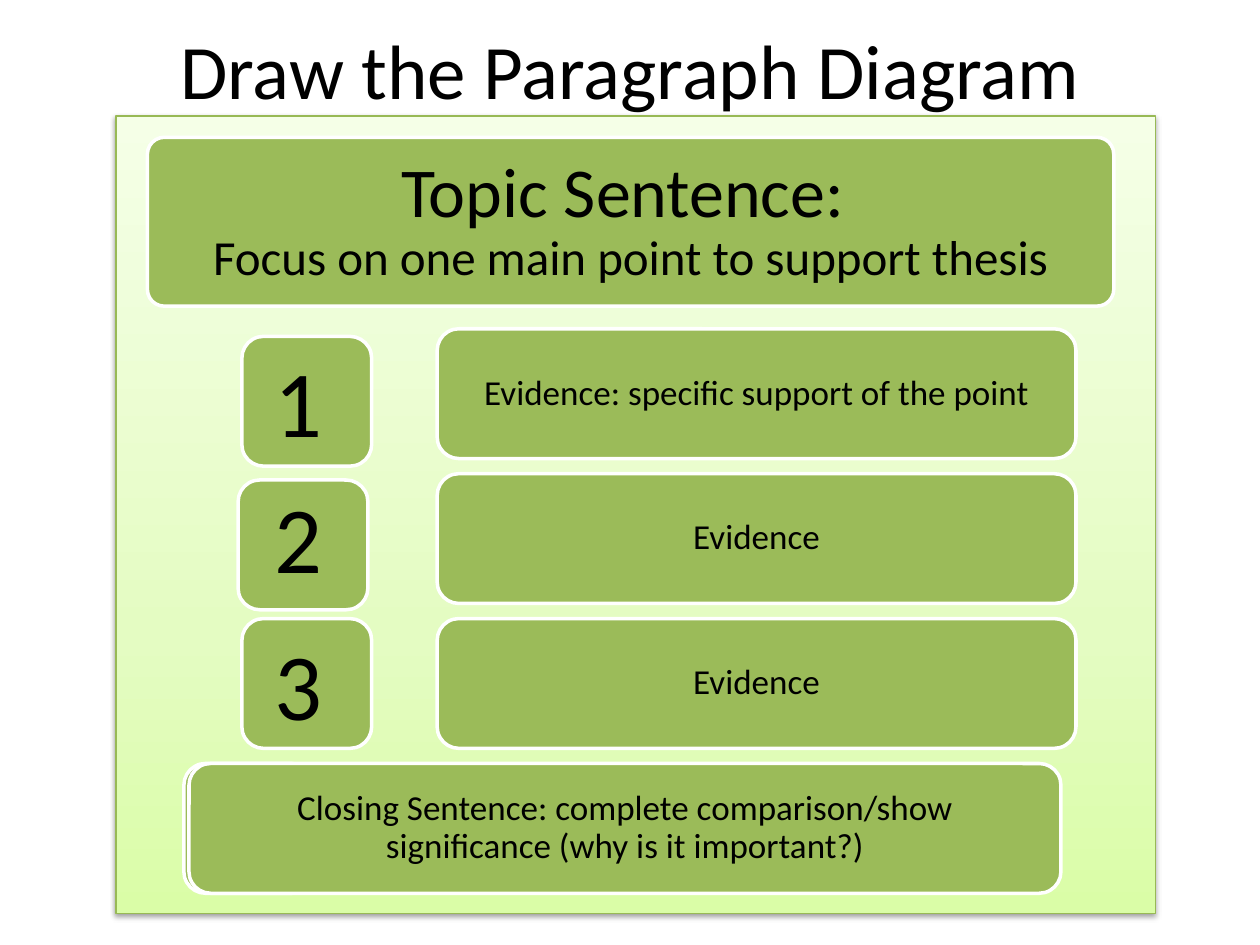
import copy

import pptx
import pptx.dml.color
import pptx.enum.shapes
import pptx.enum.text
import pptx.oxml
import pptx.oxml.ns
import pptx.util

Inches, Pt = pptx.util.Inches, pptx.util.Pt
RGB = pptx.dml.color.RGBColor.from_string
SHAPE = pptx.enum.shapes.MSO_SHAPE
ALIGN = pptx.enum.text.PP_ALIGN
ANCHOR = pptx.enum.text.MSO_ANCHOR

THEME = {
    "font": "Calibri", "text": "000000",
    "box": "9BBB59", "box_line": "FFFFFF", "panel_line": "98B955",
    "panel_stops": [(0, "DAFDA7"), (0.35, "E4FCC2"), (1, "F5FFE7")],
    "title": 44, "topic": 40, "focus": 28, "body": 20, "number": 54,
}

TITLE = "Draw the Paragraph Diagram"
# The trailing space shifts the centred heading slightly to the left.
TOPIC = [("Topic Sentence: ", THEME["topic"]),
         ("Focus on one main point to support thesis", THEME["focus"])]
# Evidence text, number, number tile (left, top), top of the number text
EVIDENCE = [
    ("Evidence: specific support of the point", "1", (1.92, 2.67), 2.67),
    ("Evidence", "2", (1.89, 3.81), 3.75),
    ("Evidence", "3", (1.92, 4.91), 4.92),
]
CLOSING = "Closing Sentence: complete comparison/show significance (why is it important?)"

ROW_TOP, ROW_PITCH, ROW_HEIGHT = 2.61, 1.15, 1.03


def write(shape, lines, align=ALIGN.CENTER, anchor=ANCHOR.MIDDLE,
          insets=(0.1, 0.05), spacing=None):
    """Fill a shape with (text, size) lines; insets are (horizontal, vertical)."""
    frame = shape.text_frame
    frame.word_wrap = True
    frame.vertical_anchor = anchor
    frame.margin_left = frame.margin_right = Inches(insets[0])
    frame.margin_top = frame.margin_bottom = Inches(insets[1])
    frame.text = "\n".join(text for text, size in lines)
    for para, (text, size) in zip(frame.paragraphs, lines):
        para.alignment = align
        para.line_spacing = spacing
        font = para.runs[0].font
        font.name, font.size = THEME["font"], Pt(size)
        font.color.rgb = RGB(THEME["text"])


def add_text(slide, place, lines, **style):
    write(slide.shapes.add_textbox(*map(Inches, place)), lines, **style)


def add_box(slide, place, lines=(), corner=0.167, insets=(0.16, 0.16)):
    box = slide.shapes.add_shape(SHAPE.ROUNDED_RECTANGLE, *map(Inches, place))
    box.adjustments[0] = corner
    box.shadow.inherit = False
    box.fill.solid()
    box.fill.fore_color.rgb = RGB(THEME["box"])
    box.line.color.rgb = RGB(THEME["box_line"])
    box.line.width = Pt(2)
    if lines:
        write(box, lines, insets=insets, spacing=0.9)


def add_panel(slide, place):
    panel = slide.shapes.add_shape(SHAPE.RECTANGLE, *map(Inches, place))
    panel.fill.gradient()
    panel.fill.gradient_angle = 90
    first = panel.fill.gradient_stops[0]
    stop_list = panel.element.spPr.find(".//" + pptx.oxml.ns.qn("a:gsLst"))
    stop_list.insert(1, copy.deepcopy(stop_list[0]))
    for stop, (position, color) in zip(panel.fill.gradient_stops, THEME["panel_stops"]):
        stop.position = position
        stop.color.rgb = RGB(color)
    panel.line.color.rgb = RGB(THEME["panel_line"])
    panel.line.width = Pt(0.75)
    panel.shadow.inherit = False
    effects = panel.element.spPr.find(pptx.oxml.ns.qn("a:effectLst"))
    effects.append(pptx.oxml.parse_xml(
        f'<a:outerShdw {pptx.oxml.ns.nsdecls("a")} blurRad="{Pt(3.1)}" '
        f'dist="{Pt(1.6)}" dir="5400000" rotWithShape="0">'
        '<a:srgbClr val="000000"><a:alpha val="38000"/></a:srgbClr></a:outerShdw>'))


def main():
    deck = pptx.Presentation()
    deck.slide_width, deck.slide_height = Inches(10), Inches(7.5)
    slide = deck.slides.add_slide(deck.slide_layouts[6])

    add_panel(slide, (0.92, 0.92, 8.25, 6.33))
    add_text(slide, (0.5, -0.08, 9, 1.25), [(TITLE, THEME["title"])])
    add_box(slide, (1.17, 1.09, 7.67, 1.34), TOPIC, corner=0.1, insets=(0.08, 0.06))

    for row, (text, number, tile, number_top) in enumerate(EVIDENCE):
        add_box(slide, (*tile, ROW_HEIGHT, ROW_HEIGHT))
        add_box(slide, (3.47, ROW_TOP + row * ROW_PITCH, 5.07, ROW_HEIGHT),
                [(text, THEME["body"])])
        add_text(slide, (2.08, number_top, 0.83, 1.01), [(number, THEME["number"])],
                 align=ALIGN.LEFT, anchor=ANCHOR.TOP)

    closing_top = ROW_TOP + len(EVIDENCE) * ROW_PITCH
    add_box(slide, (1.46, closing_top, ROW_HEIGHT, ROW_HEIGHT))
    add_box(slide, (1.5, closing_top, 6.92, ROW_HEIGHT), [(CLOSING, THEME["body"])])

    deck.save("out.pptx")


if __name__ == "__main__":
    main()
